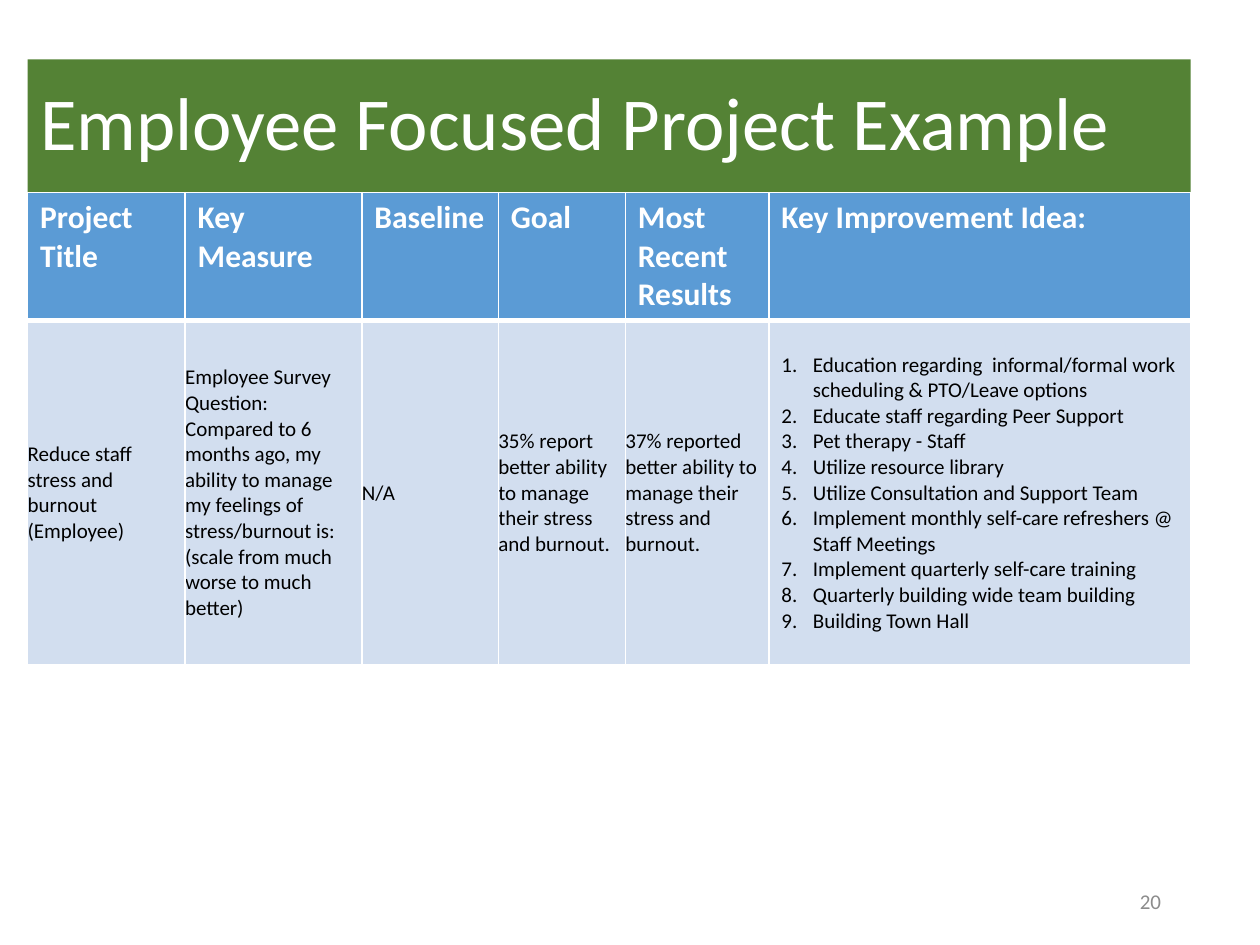
from lxml import etree
from pptx import Presentation
from pptx.dml.color import RGBColor
from pptx.enum import text
from pptx.oxml import ns
from pptx.util import Pt

FONT = "Calibri"
WHITE, BLACK, GREY = "FFFFFF", "000000", "8C8C8C"
GREEN, BLUE, PALE_BLUE = "548235", "5B9BD5", "D2DEEF"

COLUMN_WIDTHS = [90, 101, 78, 72.6, 82, 241]
ROW_HEIGHTS = [73, 197]
HEADERS = ["Project Title", "Key Measure", "Baseline", "Goal",
           "Most Recent Results", "Key Improvement Idea:"]
PROJECT = [
    "Reduce staff stress and burnout (Employee)",
    "Employee Survey Question:  Compared to 6 months ago, my ability to manage my "
    "feelings of stress/burnout is: (scale from much worse to much better)",
    "N/A",
    "35% report  better ability to manage their stress and burnout.",
    "37% reported better ability to manage their stress and burnout.",
]
IDEAS = [
    "Education regarding  informal/formal work scheduling & PTO/Leave options",
    "Educate staff regarding Peer Support",
    "Pet therapy - Staff",
    "Utilize resource library",
    "Utilize Consultation and Support Team",
    "Implement monthly self-care refreshers @ Staff Meetings",
    "Implement quarterly self-care training",
    "Quarterly building wide team building",
    "Building Town Hall",
]


def color(value):
    return RGBColor.from_string(value)


def format_text(text_frame, size, font_color, bold=False):
    for paragraph in text_frame.paragraphs:
        for run in paragraph.runs:
            run.font.name = FONT
            run.font.size = Pt(size)
            run.font.bold = bold
            run.font.color.rgb = color(font_color)


def place(shape, left, top, width, height):
    shape.left, shape.top = Pt(left), Pt(top)
    shape.width, shape.height = Pt(width), Pt(height)


def set_borders(cell, bottom):
    """Draw white cell borders, 1 pt except for the bottom one."""
    properties = cell._tc.get_or_add_tcPr()
    for side, width in (("L", 1), ("R", 1), ("T", 1), ("B", bottom)):
        line = etree.SubElement(properties, ns.qn(f"a:ln{side}"), w=str(Pt(width)))
        fill = etree.SubElement(line, ns.qn("a:solidFill"))
        etree.SubElement(fill, ns.qn("a:srgbClr"), val=WHITE)


def number_paragraphs(text_frame, indent):
    for paragraph in text_frame.paragraphs:
        properties = paragraph._p.get_or_add_pPr()
        properties.set("marL", str(Pt(indent)))
        properties.set("indent", str(-Pt(indent)))
        etree.SubElement(properties, ns.qn("a:buFont"), typeface="+mj-lt")
        etree.SubElement(properties, ns.qn("a:buAutoNum"), type="arabicPeriod")


def add_title(slide, left, top, width, height):
    title = slide.shapes.title
    place(title, left, top, width, height)
    title.fill.solid()
    title.fill.fore_color.rgb = color(GREEN)
    text_frame = title.text_frame
    text_frame.text = "Employee Focused Project Example"
    text_frame.auto_size = text.MSO_AUTO_SIZE.NONE
    text_frame.vertical_anchor = text.MSO_ANCHOR.MIDDLE
    text_frame.paragraphs[0].alignment = text.PP_ALIGN.LEFT
    text_frame.paragraphs[0].line_spacing = 0.9
    format_text(text_frame, 42.7, WHITE)


def fill_cell(cell, content, is_header):
    set_borders(cell, bottom=3 if is_header else 1)
    cell.fill.solid()
    cell.fill.fore_color.rgb = color(BLUE if is_header else PALE_BLUE)
    cell.text_frame.text = content
    if is_header:
        format_text(cell.text_frame, 18, WHITE, bold=True)
    else:
        cell.vertical_anchor = text.MSO_ANCHOR.MIDDLE
        format_text(cell.text_frame, 12, BLACK)


def add_project_table(slide, left, top, width, height):
    rows = [HEADERS, PROJECT + ["\n".join(IDEAS)]]
    table = slide.shapes.add_table(len(rows), len(HEADERS), Pt(left), Pt(top),
                                   Pt(width), Pt(height)).table
    for column, column_width in zip(table.columns, COLUMN_WIDTHS):
        column.width = Pt(column_width)
    for row, row_height in zip(table.rows, ROW_HEIGHTS):
        row.height = Pt(row_height)
    for row_index, contents in enumerate(rows):
        for column_index, content in enumerate(contents):
            fill_cell(table.cell(row_index, column_index), content, row_index == 0)
    for column_index in range(len(PROJECT)):
        cell = table.cell(1, column_index)
        cell.margin_left = cell.margin_right = cell.margin_top = cell.margin_bottom = 0
    number_paragraphs(table.cell(1, len(PROJECT)).text_frame, indent=18)


def add_slide_number(slide, left, top, width, height):
    box = slide.shapes.add_textbox(Pt(left), Pt(top), Pt(width), Pt(height))
    text_frame = box.text_frame
    text_frame.word_wrap = True
    text_frame.vertical_anchor = text.MSO_ANCHOR.MIDDLE
    text_frame.text = "20"
    text_frame.paragraphs[0].alignment = text.PP_ALIGN.RIGHT
    format_text(text_frame, 12, GREY)


def main():
    presentation = Presentation()
    presentation.slide_width, presentation.slide_height = Pt(720), Pt(540)
    slide = presentation.slides.add_slide(presentation.slide_layouts[5])
    left, width = 15.8, sum(COLUMN_WIDTHS)
    title_top, title_height = 34, 76
    add_title(slide, left, title_top, width, title_height)
    add_project_table(slide, left, title_top + title_height, width, sum(ROW_HEIGHTS))
    add_slide_number(slide, 508.5, 500.5, 162, 28.75)
    presentation.save("out.pptx")


if __name__ == "__main__":
    main()
